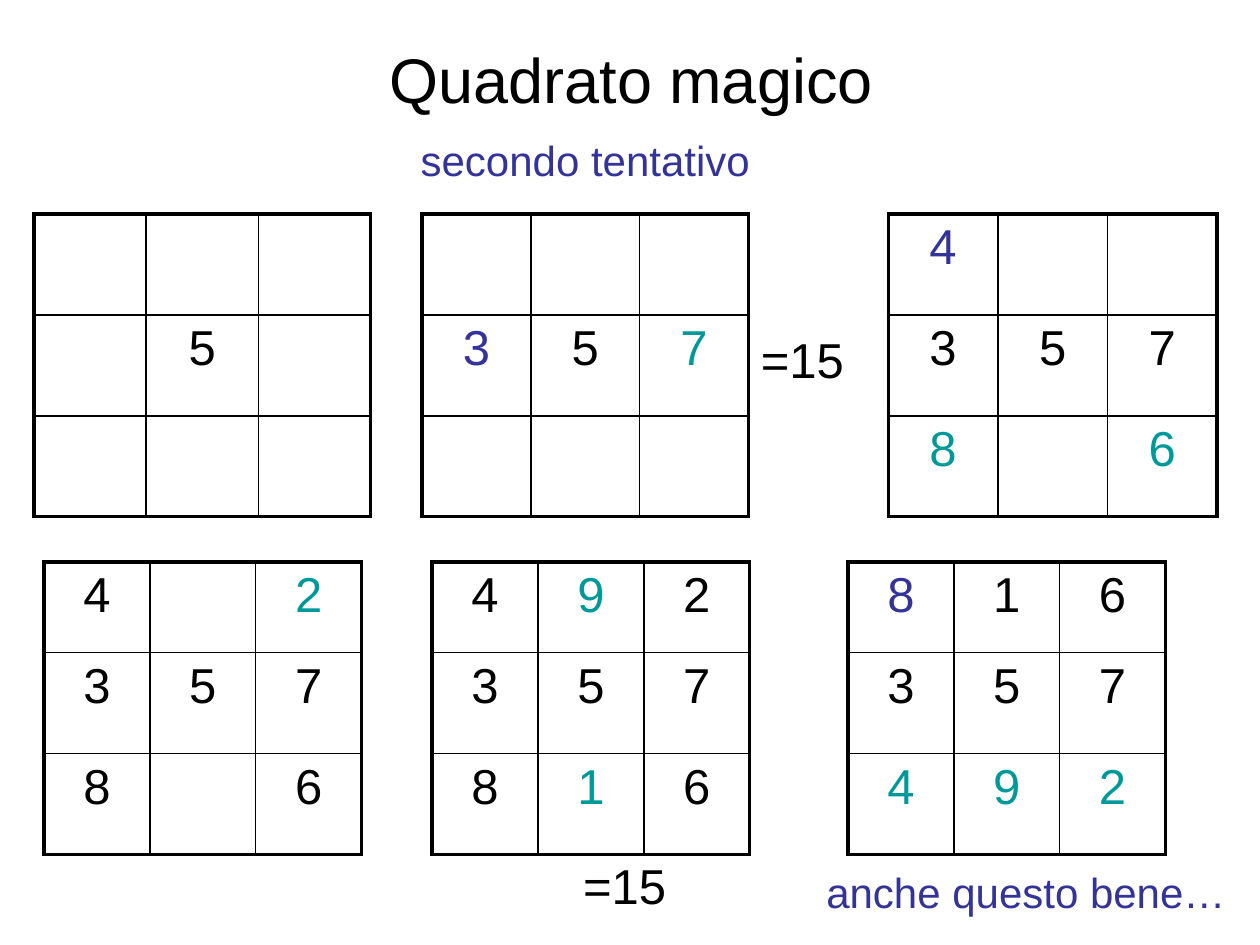
from dataclasses import dataclass

from lxml import etree
from pptx import Presentation
from pptx import util as u
from pptx.dml.color import RGBColor
from pptx.enum import text
from pptx.oxml import ns


@dataclass(frozen=True)
class Theme:
    font: str = "Arial"
    ink: str = "000000"
    chosen: str = "333399"
    derived: str = "009999"
    title_size: float = 36
    digit_size: float = 28
    note_size: float = 24
    outer_line: float = 2.25
    inner_line: float = 1


@dataclass(frozen=True)
class Square:
    """A 3 x 3 square; a space in a row is an empty cell."""
    left: float
    top: float
    width: float
    row_heights: tuple[float, ...]
    rows: tuple[str, ...]
    chosen: str = ""
    derived: str = ""


@dataclass(frozen=True)
class Note:
    left: float
    top: float
    width: float
    height: float
    wording: str
    size: float
    color: str


THEME = Theme()
UPPER_TOP, UPPER_ROWS = 1.7, (0.8, 0.8, 0.8)
LOWER_TOP, LOWER_ROWS, LOWER_WIDTH = 4.46, (0.72, 0.8, 0.8), 2.52

SQUARES = (
    Square(0.27, UPPER_TOP, 2.67, UPPER_ROWS, ("   ", " 5 ", "   ")),
    Square(3.35, UPPER_TOP, 2.59, UPPER_ROWS, ("   ", "357", "   "), "3", "7"),
    Square(7.05, UPPER_TOP, 2.61, UPPER_ROWS, ("4  ", "357", "8 6"), "4", "86"),
    Square(0.35, LOWER_TOP, LOWER_WIDTH, LOWER_ROWS, ("4 2", "357", "8 6"), "", "2"),
    Square(3.43, LOWER_TOP, LOWER_WIDTH, LOWER_ROWS, ("492", "357", "816"), "", "91"),
    Square(6.73, LOWER_TOP, LOWER_WIDTH, LOWER_ROWS, ("816", "357", "492"), "8", "492"),
)

NOTES = (
    Note(5.94, 2.57, 0.86, 0.57, "=15", THEME.digit_size, THEME.ink),
    Note(6.46, 6.83, 3.4, 0.5, "anche questo bene…", THEME.note_size, THEME.chosen),
    Note(4.53, 6.74, 0.86, 0.57, "=15", THEME.digit_size, THEME.ink),
    Note(3.24, 1.02, 2.84, 0.5, "secondo tentativo", THEME.note_size, THEME.chosen),
)


def style(paragraph, size: float, color: str) -> None:
    paragraph.font.name = THEME.font
    paragraph.font.size = u.Pt(size)
    paragraph.font.color.rgb = RGBColor.from_string(color)


def add_border(cell, position: int, side: str, width: float) -> None:
    line = etree.Element(ns.qn(f"a:ln{side}"), w=str(u.Pt(width)))
    fill = etree.SubElement(line, ns.qn("a:solidFill"))
    etree.SubElement(fill, ns.qn("a:srgbClr"), val=THEME.ink)
    cell._tc.get_or_add_tcPr().insert(position, line)


def write_digit(cell, digit: str, square: Square) -> None:
    color = (THEME.chosen if digit in square.chosen
             else THEME.derived if digit in square.derived else THEME.ink)
    paragraph = cell.text_frame.paragraphs[0]
    paragraph.text = digit
    paragraph.alignment = text.PP_ALIGN.CENTER
    # Space before as a share of the line
    before = etree.Element(ns.qn("a:spcBef"))
    etree.SubElement(before, ns.qn("a:spcPct"), val="20000")
    paragraph._p.get_or_add_pPr().insert(0, before)
    style(paragraph, THEME.digit_size, color)


def add_square(slide, square: Square) -> None:
    count = len(square.rows)
    table = slide.shapes.add_table(
        count, count, u.Inches(square.left), u.Inches(square.top),
        u.Inches(square.width), u.Inches(sum(square.row_heights))).table
    table.first_row = table.horz_banding = False
    for column in table.columns:
        column.width = u.Inches(square.width / count)
    for r, (height, digits) in enumerate(zip(square.row_heights, square.rows)):
        table.rows[r].height = u.Inches(height)
        for c, digit in enumerate(digits):
            cell = table.cell(r, c)
            cell.fill.background()
            # Heavy frame around the square, thin lines inside
            edges = {"L": c == 0, "R": c == count - 1,
                     "T": r == 0, "B": r == count - 1}
            for position, (side, outer) in enumerate(edges.items()):
                add_border(cell, position, side,
                           THEME.outer_line if outer else THEME.inner_line)
            if digit != " ":
                write_digit(cell, digit, square)


def add_note(slide, note: Note) -> None:
    frame = slide.shapes.add_textbox(
        u.Inches(note.left), u.Inches(note.top),
        u.Inches(note.width), u.Inches(note.height)).text_frame
    frame.word_wrap = False
    frame.auto_size = text.MSO_AUTO_SIZE.SHAPE_TO_FIT_TEXT
    frame.text = note.wording
    style(frame.paragraphs[0], note.size, note.color)


def add_title(slide, wording: str) -> None:
    title = slide.shapes.title
    title.left, title.top = u.Inches(0.51), u.Inches(0)
    title.width, title.height = u.Inches(9), u.Inches(1.25)
    title.text_frame.text = wording
    title.text_frame.vertical_anchor = text.MSO_ANCHOR.MIDDLE
    heading = title.text_frame.paragraphs[0]
    heading.alignment = text.PP_ALIGN.CENTER
    style(heading, THEME.title_size, THEME.ink)


def main() -> None:
    deck = Presentation()
    deck.slide_width, deck.slide_height = u.Inches(10), u.Inches(7.5)
    slide = deck.slides.add_slide(deck.slide_layouts.get_by_name("Title Only"))
    add_title(slide, "Quadrato magico")
    # Successive steps of the attempt
    for square in SQUARES:
        add_square(slide, square)
    # Sums and remarks
    for note in NOTES:
        add_note(slide, note)
    deck.save("out.pptx")


if __name__ == "__main__":
    main()
